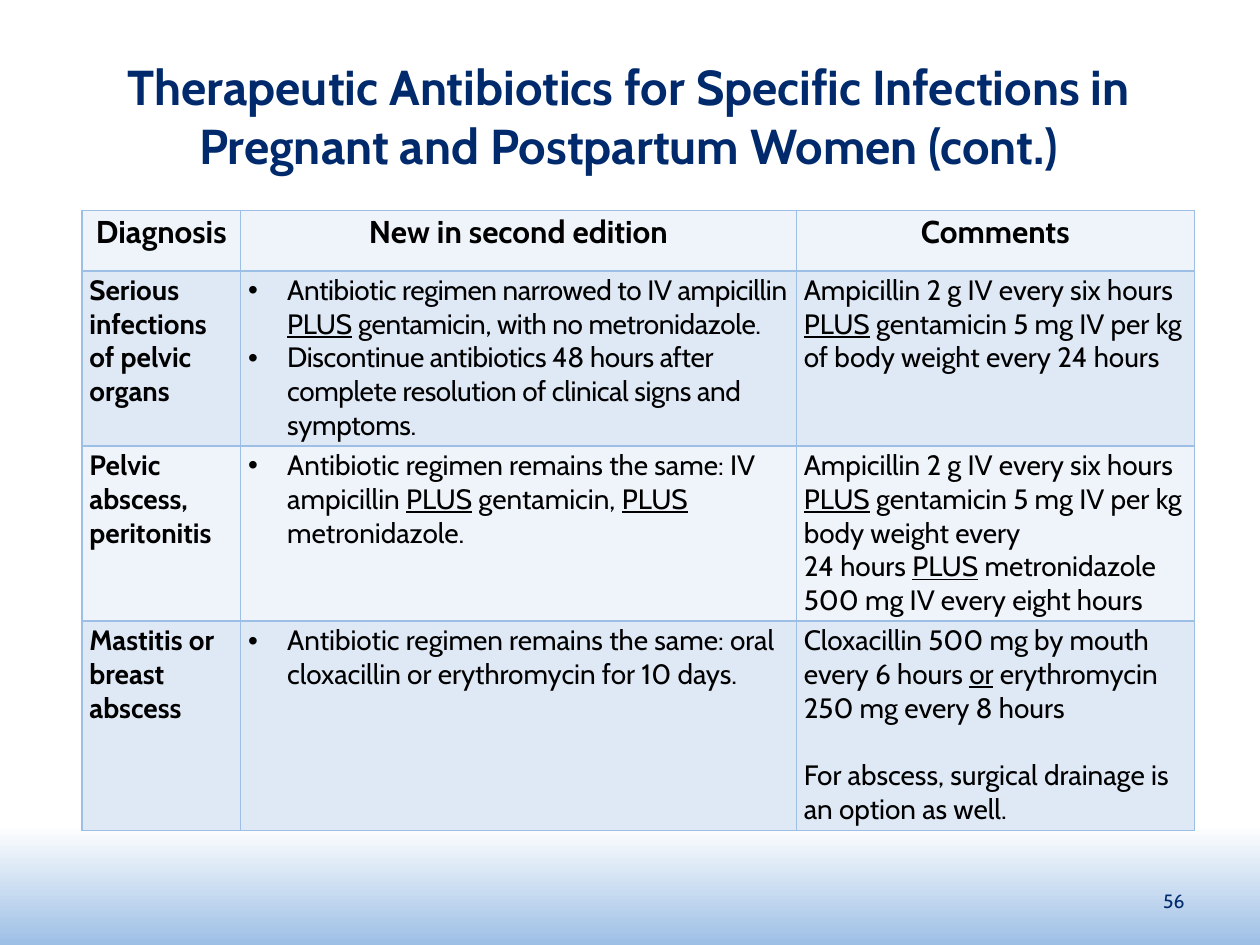
from lxml import etree
from pptx import Presentation
from pptx.dml.color import RGBColor
from pptx.enum.shapes import MSO_SHAPE
from pptx.enum.text import MSO_ANCHOR, MSO_AUTO_SIZE, PP_ALIGN
from pptx.oxml.ns import qn
from pptx.util import Inches, Pt

RECT = MSO_SHAPE.RECTANGLE
MIDDLE = MSO_ANCHOR.MIDDLE
NO_FIT = MSO_AUTO_SIZE.NONE
LEFT, CENTER, RIGHT = PP_ALIGN.LEFT, PP_ALIGN.CENTER, PP_ALIGN.RIGHT

NAVY = RGBColor(0x00, 0x2A, 0x6C)
BLACK = RGBColor(0x00, 0x00, 0x00)
WHITE = RGBColor(0xFF, 0xFF, 0xFF)
BLUE = RGBColor(0x9D, 0xBF, 0xE5)
PALE = RGBColor(0xEF, 0xF4, 0xFA)
TINT = RGBColor(0xDF, 0xE8, 0xF5)

FACE = "Cabin"
TITLE = {"name": FACE, "size": Pt(28), "bold": True, "color": NAVY}
HEAD = {"name": FACE, "size": Pt(18), "bold": True, "color": BLACK}
LABEL = {"name": FACE, "size": Pt(16), "bold": True, "color": BLACK}
BODY = {"name": FACE, "size": Pt(16), "bold": False, "color": BLACK}
NUMBER = {"name": FACE, "size": Pt(11), "bold": False, "color": NAVY}

COLS = [1.26, 4.41, 3.16]
ROWS = [0.48, 1.39, 1.39, 1.66]
INSETS = {"margin_left": 0.06, "margin_top": 0.02,
          "margin_right": 0.06, "margin_bottom": 0.02}
INDENT = Inches(0.31)
GAP = Pt(19.2)

# Underscores enclose underlined words.
HEADERS = ["Diagnosis", "New in second edition", "Comments"]
CASES = [
    ("Serious infections of pelvic organs",
     ["Antibiotic regimen narrowed to IV ampicillin _PLUS_ gentamicin, "
      "with no metronidazole.",
      "Discontinue antibiotics 48 hours after complete resolution of "
      "clinical signs and symptoms."],
     ["Ampicillin 2 g IV every six hours _PLUS_ gentamicin 5 mg IV per kg "
      "of body weight every 24 hours"]),
    ("Pelvic abscess, peritonitis",
     ["Antibiotic regimen remains the same: IV ampicillin _PLUS_ "
      "gentamicin, _PLUS_ metronidazole."],
     ["Ampicillin 2 g IV every six hours _PLUS_ gentamicin 5 mg IV per kg "
      "body weight every \n24 hours _PLUS_ metronidazole 500 mg IV every "
      "eight hours"]),
    ("Mastitis or breast abscess",
     ["Antibiotic regimen remains the same: oral cloxacillin or "
      "erythromycin for 10 days."],
     ["Cloxacillin 500 mg by mouth every 6 hours _or_ erythromycin 250 mg "
      "every 8 hours",
      "For abscess, surgical drainage is an option as well."]),
]


def style(font, look):
    for key, value in look.items():
        if key == "color":
            font.color.rgb = value
        else:
            setattr(font, key, value)


def write(para, text, look, align=LEFT, track=0):
    """Fill a paragraph, underlining the words between underscores."""
    para.alignment = align
    for i, part in enumerate(text.split("_")):
        for j, line in enumerate(part.split("\n")):
            if j:
                para.add_line_break()
            if line:
                run = para.add_run()
                run.text = line
                style(run.font, look)
                run.font.underline = i % 2 == 1
                if track:
                    run.font._element.set("spc", str(track))


def add_bullet(para):
    props = para._p.get_or_add_pPr()
    props.set("marL", str(INDENT))
    props.set("indent", str(-INDENT))
    etree.SubElement(props, qn("a:buFont"), typeface="Arial")
    etree.SubElement(props, qn("a:buChar"), char="•")


def add_borders(cell):
    props = cell._tc.get_or_add_tcPr()
    for side in ("lnL", "lnR", "lnT", "lnB"):
        line = etree.SubElement(props, qn("a:" + side), w=str(Pt(1)))
        fill = etree.SubElement(line, qn("a:solidFill"))
        etree.SubElement(fill, qn("a:srgbClr"), val=str(BLUE))


def fill_cell(cell, texts, look, color, align=LEFT, bullets=False,
              gap=0, track=0):
    add_borders(cell)
    cell.fill.solid()
    cell.fill.fore_color.rgb = color
    for key, value in INSETS.items():
        setattr(cell, key, Inches(value))
    frame = cell.text_frame
    for i, text in enumerate(texts):
        para = frame.add_paragraph() if i else frame.paragraphs[0]
        if bullets:
            add_bullet(para)
        if i and gap:
            para.space_before = gap
        write(para, text, look, align, track)


def add_fade(slide, box):
    """Add the backdrop that fades to blue, behind everything else."""
    fade = slide.shapes.add_shape(RECT, *map(Inches, box))
    fade.shadow.inherit = False
    fade.line.fill.background()
    fade.fill.gradient()
    fade.fill.gradient_angle = 270
    for stop, (place, color) in zip(fade.fill.gradient_stops,
                                    [(0.8, WHITE), (1, BLUE)]):
        stop.position = place
        stop.color.rgb = color
    slide.shapes._spTree.insert(2, fade._element)


def set_title(slide, box, text):
    title = slide.shapes.title
    title.left, title.top, title.width, title.height = map(Inches, box)
    frame = title.text_frame
    frame.auto_size = NO_FIT
    frame.vertical_anchor = MIDDLE
    write(frame.paragraphs[0], text, TITLE, CENTER)


def add_grid(slide, box):
    shape = slide.shapes.add_table(len(ROWS), len(COLS), *map(Inches, box))
    table = shape.table
    table.horz_banding = False
    for col, width in zip(table.columns, COLS):
        col.width = Inches(width)
    for row, height in zip(table.rows, ROWS):
        row.height = Inches(height)
    for i, text in enumerate(HEADERS):
        fill_cell(table.cell(0, i), [text], HEAD, PALE, CENTER)
    for i, (label, news, notes) in enumerate(CASES, 1):
        color = TINT if i % 2 else PALE
        fill_cell(table.cell(i, 0), [label], LABEL, color)
        fill_cell(table.cell(i, 1), news, BODY, color, bullets=True,
                  track=-20 if i == 1 else 0)
        fill_cell(table.cell(i, 2), notes, BODY, color, gap=GAP)


def add_number(slide, box, text):
    frame = slide.shapes.add_textbox(*map(Inches, box)).text_frame
    frame.word_wrap = True
    frame.vertical_anchor = MIDDLE
    write(frame.paragraphs[0], text, NUMBER, RIGHT)


def main():
    deck = Presentation()
    deck.slide_width, deck.slide_height = Inches(10), Inches(7.5)
    slide = deck.slides.add_slide(deck.slide_layouts[5])
    add_fade(slide, (0, 2.75, 10, 4.75))
    set_title(slide, (0.49, 0.33, 9, 1.17),
              "Therapeutic Antibiotics for Specific Infections in "
              "Pregnant and Postpartum Women (cont.)")
    add_grid(slide, (0.65, 1.67, sum(COLS), sum(ROWS)))
    add_number(slide, (7.17, 6.95, 2.33, 0.4), "56")
    deck.save("out.pptx")


if __name__ == "__main__":
    main()
